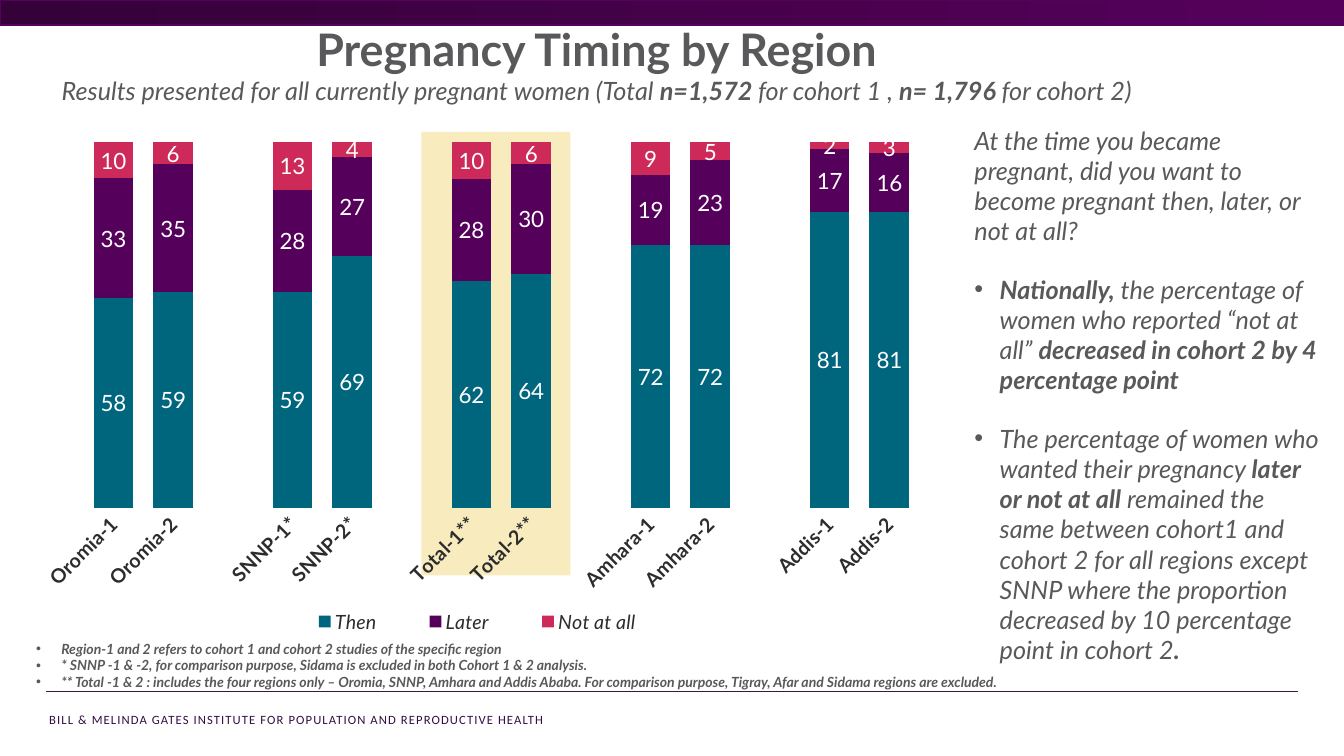
import pptx
import pptx.chart.data
import pptx.dml.color
import pptx.enum.chart
import pptx.enum.shapes
import pptx.enum.text
import pptx.oxml
import pptx.oxml.ns
import pptx.util
from lxml import etree

Pt = pptx.util.Pt
qn = pptx.oxml.ns.qn

COLORS = {
    "grey": "59595B", "ink": "2C2C2D", "white": "FFFFFF",
    "then": "00667D", "later": "55015B", "not_at_all": "CD2959",
    "highlight": "EDC950", "band_dark": "350139",
    "rule": "411044", "footer": "330F42",
}

REGIONS = ["Oromia-1", "Oromia-2", "", "SNNP-1*", "SNNP-2*", "",
           "Total-1**", "Total-2**", "", "Amhara-1", "Amhara-2", "",
           "Addis-1", "Addis-2"]
TIMINGS = [
    ("Then", "then", [58, 59, None, 59, 69, None, 62, 64, None, 72, 72, None, 81, 81]),
    ("Later", "later", [33, 35, None, 28, 27, None, 28, 30, None, 19, 23, None, 17, 16]),
    ("Not at all", "not_at_all", [10, 6, None, 13, 4, None, 10, 6, None, 9, 5, None, 2, 3]),
]
SUBTITLE = ("Results presented for all currently pregnant women (Total |n=1,572 |"
            "for cohort 1 , |n= 1,796 |for cohort 2)")
QUESTION = ("At the time you became pregnant, did you want to become pregnant "
            "then, later, or not at all?")
FINDINGS = [
    "|Nationally,| the percentage of women who reported “not at all” "
    "|decreased in cohort 2 by 4 percentage point",
    "The percentage of women who wanted their pregnancy |later or not at all| "
    "remained the same between cohort1 and cohort 2 for all regions except SNNP "
    "where the proportion decreased by 10 percentage point in cohort 2|.",
]
NOTES = [
    "|Region-1 and 2 refers to cohort 1 and cohort 2 studies of the specific region",
    "|* SNNP -1 & -2, for comparison purpose, Sidama is excluded in both "
    "Cohort 1 & 2 analysis.",
    "|** Total -1 & 2 : includes the four regions only – Oromia, SNNP, Amhara and "
    "Addis Ababa. For comparison purpose, Tigray, Afar and Sidama regions are excluded.",
]
FOOTER = "BILL & MELINDA GATES INSTITUTE FOR POPULATION AND REPRODUCTIVE HEALTH"


def rgb(name):
    return pptx.dml.color.RGBColor.from_string(COLORS[name])


def style_font(font, size, color, face="Lato", bold=False, italic=False):
    font.size, font.name = Pt(size), face
    font.bold, font.italic = bold, italic
    font.color.rgb = rgb(color)


def add_text_frame(slide, left, top, width, height):
    frame = slide.shapes.add_textbox(Pt(left), Pt(top), Pt(width), Pt(height)).text_frame
    frame.word_wrap = True
    return frame


def write_paragraph(frame, text, size, italic=True, bullet=False, before=0, align=None):
    """Fill the next paragraph; each | in the text switches bold on or off."""
    is_first = not frame.paragraphs[0].runs
    paragraph = frame.paragraphs[0] if is_first else frame.add_paragraph()
    paragraph.alignment = align
    if before and not is_first:
        paragraph.space_before = Pt(before)
    if bullet:
        properties = paragraph._p.get_or_add_pPr()
        properties.set("marL", str(Pt(18)))
        properties.set("indent", str(Pt(-18)))
        bullet_color = etree.SubElement(properties, qn("a:buClr"))
        etree.SubElement(bullet_color, qn("a:srgbClr"), val=COLORS["grey"])
        etree.SubElement(properties, qn("a:buFont"), typeface="Arial")
        etree.SubElement(properties, qn("a:buChar"), char="•")
    for index, part in enumerate(text.split("|")):
        if part:
            run = paragraph.add_run()
            run.text = part
            style_font(run.font, size, "grey", bold=index % 2 == 1, italic=italic)


def add_rectangle(slide, left, top, width, height):
    rectangle = slide.shapes.add_shape(pptx.enum.shapes.MSO_SHAPE.RECTANGLE,
                                       Pt(left), Pt(top), Pt(width), Pt(height))
    rectangle.shadow.inherit = False
    return rectangle


def add_top_band(slide):
    band = add_rectangle(slide, 0, 0, 960, 18)
    band.fill.gradient()
    band.fill.gradient_angle = 0
    for stop, color in zip(band.fill.gradient_stops, ("band_dark", "later")):
        stop.color.rgb = rgb(color)
    band.line.color.rgb = rgb("later")
    band.line.width = Pt(1)


def add_total_highlight(slide):
    highlight = add_rectangle(slide, 301, 94.3, 106.5, 316.8)
    highlight.fill.solid()
    highlight.fill.fore_color.rgb = rgb("highlight")
    highlight.line.fill.background()
    tint = highlight._element.spPr.find(qn("a:solidFill"))[0]
    etree.SubElement(tint, qn("a:alpha"), val="37000")


def add_footer(slide):
    rule = slide.shapes.add_connector(pptx.enum.shapes.MSO_CONNECTOR.STRAIGHT,
                                      Pt(927.4), Pt(494), Pt(33.1), Pt(494))
    rule.line.color.rgb = rgb("rule")
    rule.line.width = Pt(1.25)
    etree.SubElement(rule._element.spPr, qn("a:effectLst"))
    frame = add_text_frame(slide, 28, 504.7, 531.4, 18)
    frame.text = FOOTER
    run = frame.paragraphs[0].runs[0]
    style_font(run.font, 9, "footer", face="Calibri")
    run._r.get_or_add_rPr().set("spc", "80")


def make_layout(x, y, width, height, inner=False):
    """Return a manual chart layout in fractions of the chart's size."""
    layout = pptx.oxml.parse_xml(
        '<c:layout xmlns:c="http://schemas.openxmlformats.org/drawingml/2006/chart">'
        "<c:manualLayout/></c:layout>")
    settings = [("layoutTarget", "inner")] if inner else []
    settings += [("xMode", "edge"), ("yMode", "edge"),
                 ("x", x), ("y", y), ("w", width), ("h", height)]
    for tag, value in settings:
        etree.SubElement(layout[0], qn("c:" + tag), val=str(value))
    return layout


def add_timing_chart(slide):
    data = pptx.chart.data.CategoryChartData(number_format="0")
    data.categories = REGIONS
    for name, _, values in TIMINGS:
        data.add_series(name, values)
    chart = slide.shapes.add_chart(
        pptx.enum.chart.XL_CHART_TYPE.COLUMN_STACKED_100,
        Pt(18.7), Pt(94.3), Pt(650.9), Pt(364.3), data).chart
    chart.has_title = False
    style_font(chart.font, 10, "grey", face="Arial")

    plot = chart.plots[0]
    plot.gap_width, plot.overlap = 50, 100
    plot.vary_by_categories = False
    for series, (_, color, _) in zip(plot.series, TIMINGS):
        series.format.fill.solid()
        series.format.fill.fore_color.rgb = rgb(color)
        labels = series.data_labels
        labels.show_value = True
        labels.number_format, labels.number_format_is_linked = "0", False
        style_font(labels.font, 16, "white")

    chart.value_axis.visible = False
    chart.value_axis.has_major_gridlines = False
    regions = chart.category_axis
    regions.major_tick_mark = pptx.enum.chart.XL_TICK_MARK.NONE
    regions.format.line.fill.background()
    style_font(regions.tick_labels.font, 14, "ink", bold=True)
    regions._element.find(qn("c:txPr")).find(qn("a:bodyPr")).set("rot", "-2700000")

    chart.has_legend = True
    chart.legend.position = pptx.enum.chart.XL_LEGEND_POSITION.BOTTOM
    chart.legend.include_in_layout = False
    style_font(chart.legend.font, 14, "ink", italic=True)

    plot_area = plot._element.getparent()
    for old_layout in plot_area.findall(qn("c:layout")):
        plot_area.remove(old_layout)
    plot_area.insert(0, make_layout(0.063, 0.02, 0.917, 0.717, inner=True))
    legend = chart.legend._element
    for old_layout in legend.findall(qn("c:layout")):
        legend.remove(old_layout)
    legend.find(qn("c:legendPos")).addnext(make_layout(0.27, 0.92, 0.45, 0.08))


def main():
    deck = pptx.Presentation()
    deck.slide_width, deck.slide_height = Pt(960), Pt(540)
    slide = deck.slides.add_slide(deck.slide_layouts[6])
    add_footer(slide)
    add_top_band(slide)
    add_total_highlight(slide)

    center = pptx.enum.text.PP_ALIGN.CENTER
    heading = add_text_frame(slide, 0, 12.2, 852.5, 87.8)
    write_paragraph(heading, "|Pregnancy Timing by Region", 32, italic=False, align=center)
    write_paragraph(heading, SUBTITLE, 18, align=center)

    commentary = add_text_frame(slide, 689, 85.7, 262.8, 386.6)
    write_paragraph(commentary, QUESTION, 18)
    for finding in FINDINGS:
        write_paragraph(commentary, finding, 18, bullet=True, before=20)

    add_timing_chart(slide)
    footnotes = add_text_frame(slide, 18.7, 453.6, 867.6, 46.8)
    for note in NOTES:
        write_paragraph(footnotes, note, 10, bullet=True)
    deck.save("out.pptx")


if __name__ == "__main__":
    main()
